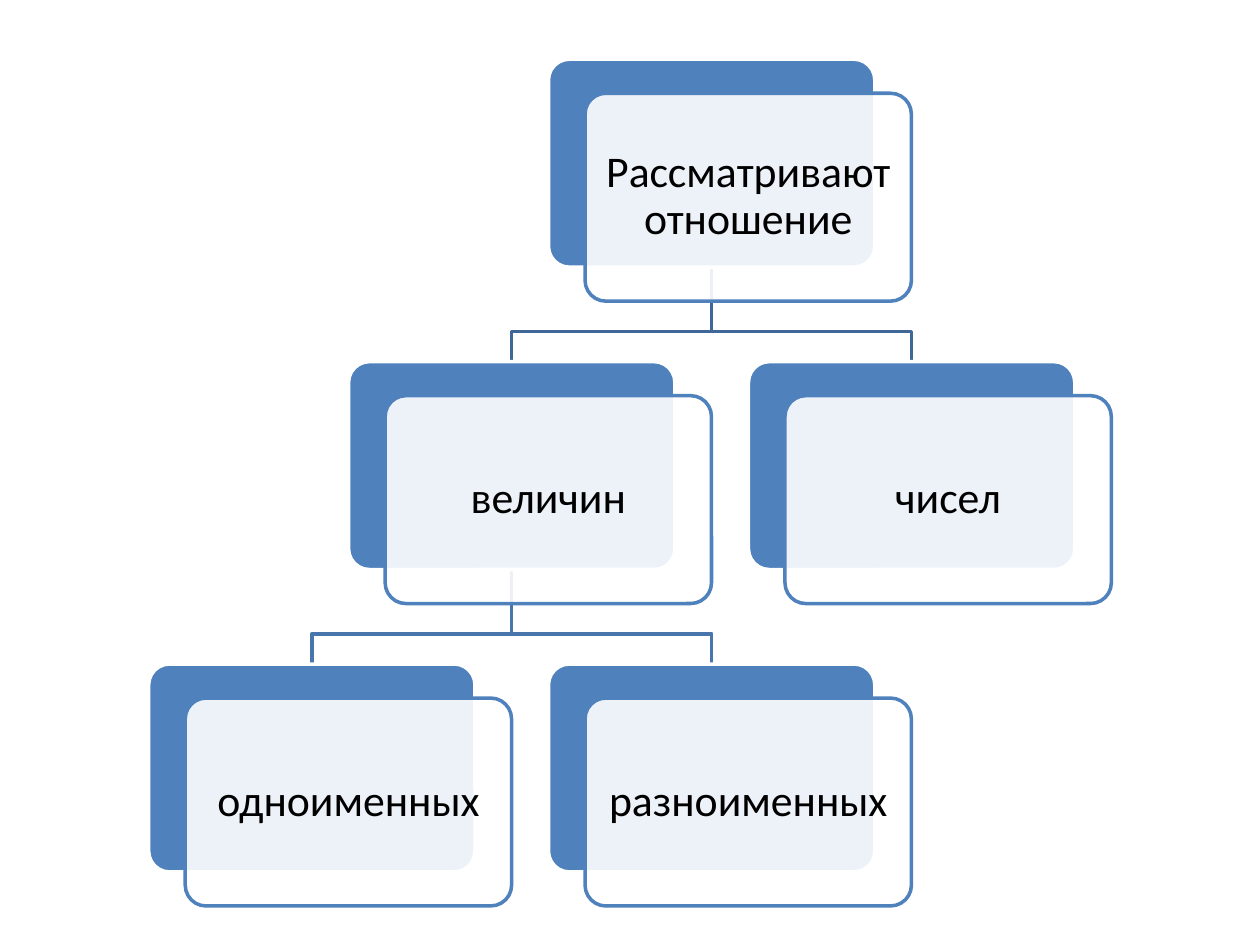
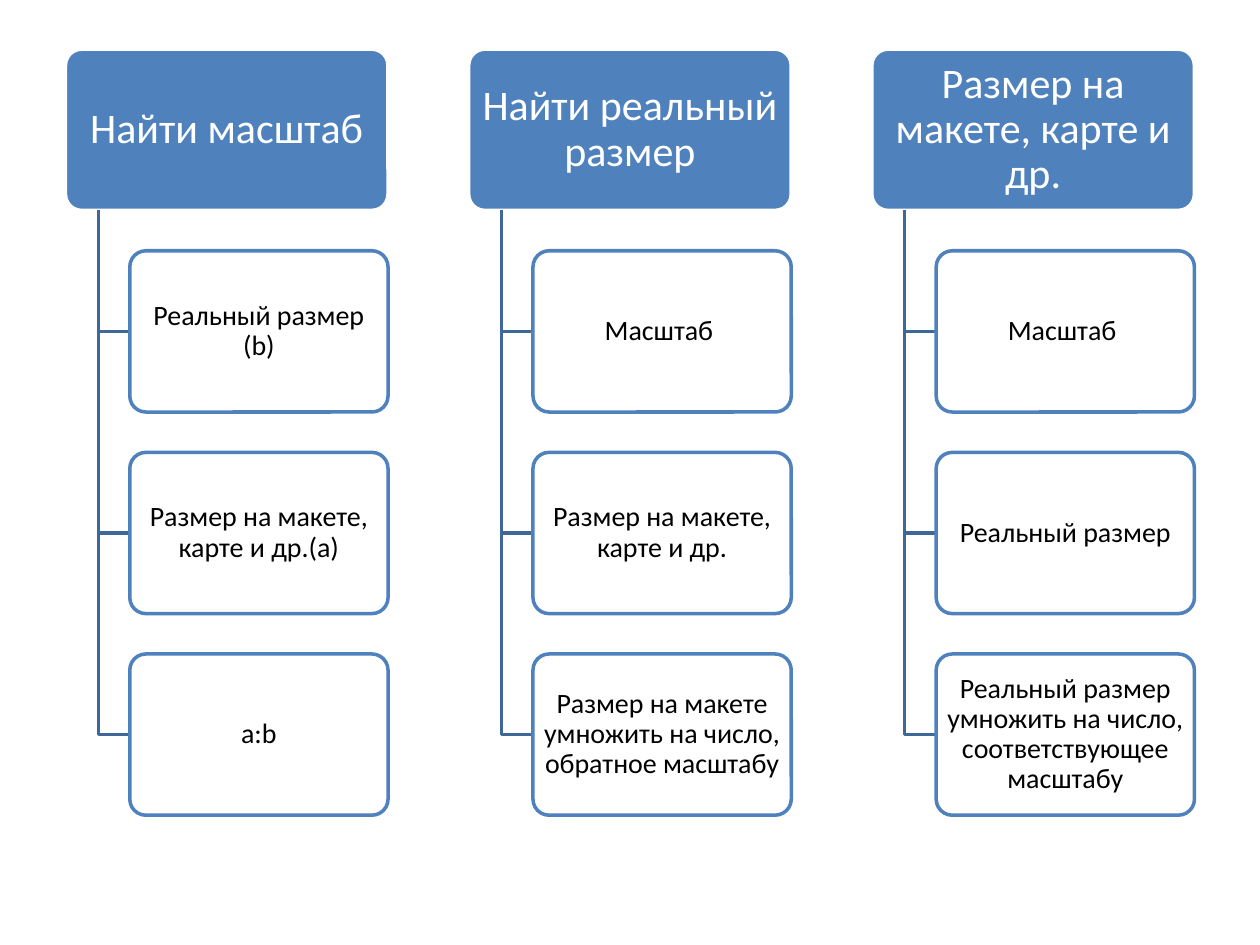
from dataclasses import dataclass

from lxml.etree import SubElement
from pptx import Presentation
from pptx.dml.color import RGBColor
from pptx.enum.shapes import MSO_SHAPE
from pptx.enum.text import MSO_ANCHOR, PP_ALIGN
from pptx.oxml.ns import qn
from pptx.shapes.autoshape import Shape
from pptx.slide import Slide
from pptx.util import Inches, Pt

COLORS = {
    "blue": "4F81BD",
    "white": "FFFFFF",
    "black": "000000",
    "upper_link": "3F6797",
    "lower_link": "4875AC",
}
FONT = "Calibri"
LINE_WIDTH = Pt(2)
CORNER = 0.1

NODE_WIDTH, NODE_HEIGHT = 2.59, 1.65
TREE_LEFT, TREE_TOP = 1.18, 0.47
COLUMN_STEP, LEVEL_STEP = 4.76 / 3, 2.4
CARD_SHIFT_X, CARD_SHIFT_Y = 0.29, 0.27
BEND_ABOVE_CHILD = 0.24

TASK_LEFT, TASK_TOP, TASK_STEP = 0.52, 0.39, 3.2
TASK_WIDTH, ITEM_WIDTH, BOX_HEIGHT = 2.56, 2.05, 1.28
TRUNK_SHIFT, ITEM_SHIFT = 0.26, 0.51
ITEM_STEP = 1.6


@dataclass(frozen=True)
class Node:
    text: str
    column: int
    level: int

    @property
    def left(self) -> float:
        return TREE_LEFT + self.column * COLUMN_STEP

    @property
    def top(self) -> float:
        return TREE_TOP + self.level * LEVEL_STEP

    @property
    def center(self) -> float:
        return self.left + NODE_WIDTH / 2


@dataclass(frozen=True)
class Task:
    title: str
    items: tuple[str, ...]


RATIO = Node("Рассматривают отношение", 2, 0)
QUANTITIES = Node("величин", 1, 1)
NUMBERS = Node("чисел", 3, 1)
SAME_NAMED = Node("одноименных", 0, 2)
DIFFERENTLY_NAMED = Node("разноименных", 2, 2)
NODES = (RATIO, QUANTITIES, SAME_NAMED, DIFFERENTLY_NAMED, NUMBERS)
BRANCHES = (
    (RATIO, NUMBERS, "upper_link"),
    (QUANTITIES, DIFFERENTLY_NAMED, "lower_link"),
    (QUANTITIES, SAME_NAMED, "lower_link"),
    (RATIO, QUANTITIES, "upper_link"),
)
TASKS = (
    Task("Найти масштаб", (
        "Реальный размер (b)",
        "Размер на макете, карте и др.(a)",
        "a:b",
    )),
    Task("Найти реальный размер", (
        "Масштаб ",
        "Размер на макете, карте и др.",
        "Размер на макете умножить на число, обратное масштабу",
    )),
    Task("Размер на макете, карте и др.", (
        "Масштаб ",
        "Реальный размер",
        "Реальный размер умножить на число, соответствующее масштабу",
    )),
)


def rgb(color: str) -> RGBColor:
    return RGBColor.from_string(COLORS[color])


def add_box(slide: Slide, left: float, top: float, width: float, height: float,
            *, fill: str, line: str, opacity: int = 100) -> Shape:
    box = slide.shapes.add_shape(
        MSO_SHAPE.ROUNDED_RECTANGLE,
        Inches(left), Inches(top), Inches(width), Inches(height))
    box.adjustments[0] = CORNER
    box.shadow.inherit = False
    box.fill.solid()
    box.fill.fore_color.rgb = rgb(fill)
    if opacity < 100:
        fill_color = box.fill._xPr.find(qn("a:solidFill"))[0]
        SubElement(fill_color, qn("a:alpha"), val=str(opacity * 1000))
    box.line.color.rgb = rgb(line)
    box.line.width = LINE_WIDTH
    return box


def write_text(box: Shape, text: str, *, size: int, color: str = "black",
               inset_x: float, inset_y: float) -> None:
    frame = box.text_frame
    frame.word_wrap = True
    frame.vertical_anchor = MSO_ANCHOR.MIDDLE
    frame.margin_left = frame.margin_right = Inches(inset_x)
    frame.margin_top = frame.margin_bottom = Inches(inset_y)
    paragraph = frame.paragraphs[0]
    paragraph.alignment = PP_ALIGN.CENTER
    paragraph.line_spacing = 0.9
    run = paragraph.add_run()
    run.text = text
    run.font.name = FONT
    run.font.size = Pt(size)
    run.font.color.rgb = rgb(color)


def add_link(slide: Slide, points: list[tuple[float, float]], color: str) -> None:
    start, *bends = [(Inches(x), Inches(y)) for x, y in points]
    builder = slide.shapes.build_freeform(*start)
    builder.add_line_segments(bends, close=False)
    link = builder.convert_to_shape()
    link.shadow.inherit = False
    link.fill.background()
    link.line.color.rgb = rgb(color)
    link.line.width = LINE_WIDTH


def draw_branch(slide: Slide, parent: Node, child: Node, color: str) -> None:
    bend = child.top - BEND_ABOVE_CHILD
    add_link(slide, [
        (parent.center, parent.top + NODE_HEIGHT),
        (parent.center, bend),
        (child.center, bend),
        (child.center, child.top),
    ], color)


def draw_node(slide: Slide, node: Node) -> None:
    add_box(slide, node.left, node.top, NODE_WIDTH, NODE_HEIGHT,
            fill="blue", line="white")
    card = add_box(slide, node.left + CARD_SHIFT_X, node.top + CARD_SHIFT_Y,
                   NODE_WIDTH, NODE_HEIGHT, fill="white", line="blue", opacity=90)
    write_text(card, node.text, size=25, inset_x=0.1, inset_y=0.1)


def draw_task(slide: Slide, task: Task, left: float) -> None:
    header = add_box(slide, left, TASK_TOP, TASK_WIDTH, BOX_HEIGHT,
                     fill="blue", line="white")
    write_text(header, task.title, size=24, color="white",
               inset_x=0.05, inset_y=0.03)
    trunk, item_left = left + TRUNK_SHIFT, left + ITEM_SHIFT
    for row, item in enumerate(task.items, start=1):
        top = TASK_TOP + row * ITEM_STEP
        middle = top + BOX_HEIGHT / 2
        add_link(slide, [(trunk, TASK_TOP + BOX_HEIGHT), (trunk, middle),
                         (item_left, middle)], "upper_link")
        card = add_box(slide, item_left, top, ITEM_WIDTH, BOX_HEIGHT,
                       fill="white", line="blue", opacity=90)
        write_text(card, item, size=16, inset_x=0.03, inset_y=0.02)


def main() -> None:
    deck = Presentation()
    deck.slide_width, deck.slide_height = Inches(10), Inches(7.5)
    blank = deck.slide_layouts[6]

    ratio_slide = deck.slides.add_slide(blank)
    for parent, child, color in BRANCHES:
        draw_branch(ratio_slide, parent, child, color)
    for node in NODES:
        draw_node(ratio_slide, node)

    scale_slide = deck.slides.add_slide(blank)
    for column, task in enumerate(TASKS):
        draw_task(scale_slide, task, TASK_LEFT + column * TASK_STEP)

    deck.save("out.pptx")


if __name__ == "__main__":
    main()
